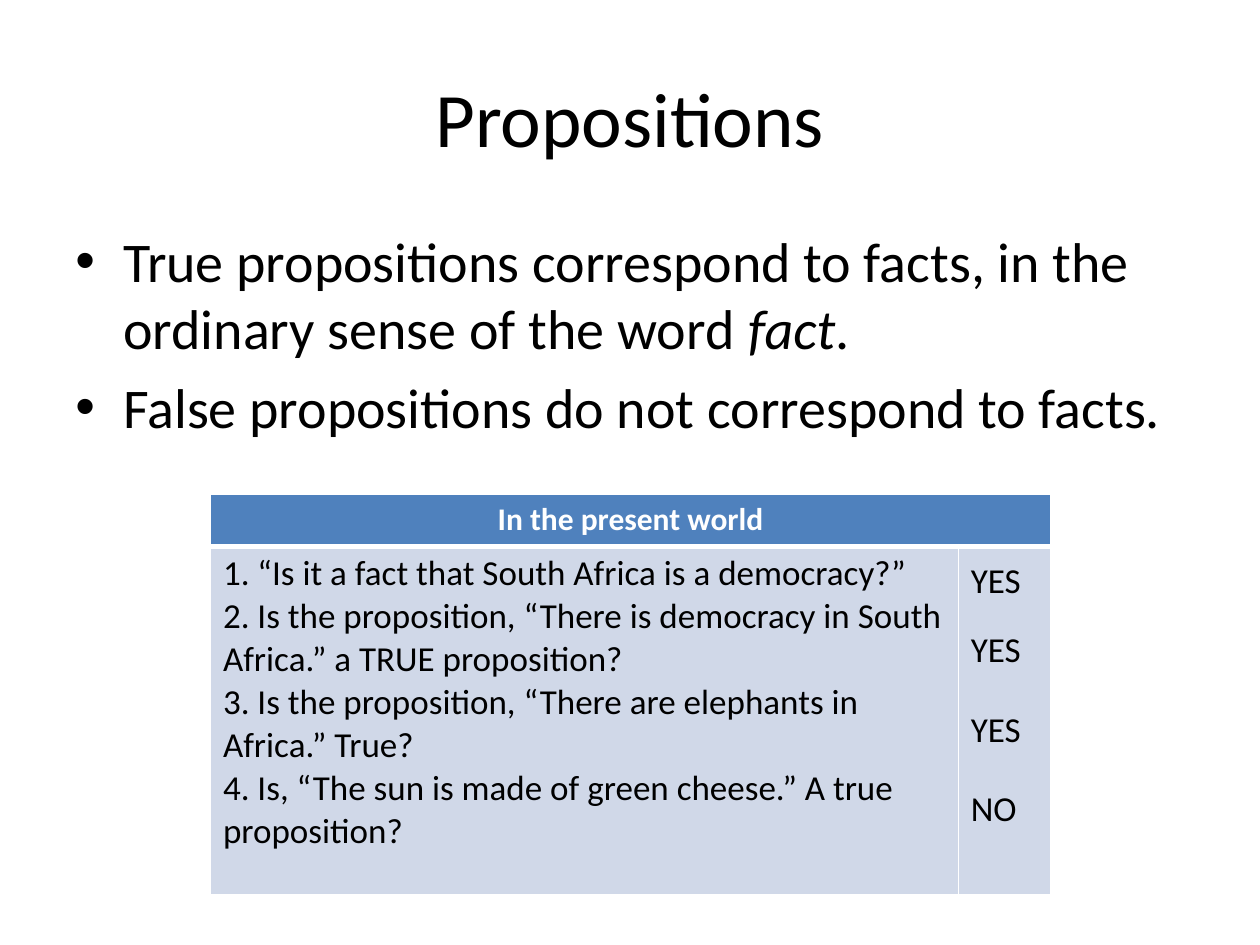
from lxml.etree import SubElement
from pptx import Presentation
from pptx.dml.color import RGBColor
from pptx.enum.text import MSO_ANCHOR, PP_ALIGN
from pptx.oxml.ns import qn
from pptx.util import Inches, Pt

WIDTH, HEIGHT = Inches(10), Inches(7.5)
FONT = "Calibri"
COLORS = {"text": "000000", "header": "4F81BD", "body": "D0D8E8", "white": "FFFFFF"}

BULLETS = [
    [("True propositions correspond to facts, in the ordinary sense of the word ", False),
     ("fact", True), (".", False)],
    [("False propositions do not correspond to facts.", False)],
]
QUESTIONS = [
    "1. “Is it a fact that South Africa is a democracy?”",
    "2. Is the proposition, “There is democracy in South Africa.” a TRUE proposition?",
    "3. Is the proposition, “There are elephants in Africa.” True?",
    "4. Is, “The sun is made of green cheese.” A true proposition?",
]
# Each answer with its top, as a share of the table's height
ANSWERS = [("YES", 0.145), ("YES", 0.317), ("YES", 0.516), ("NO", 0.714)]


def rgb(name):
    return RGBColor.from_string(COLORS[name])


def share(x, y, w, h):
    """Turn shares of the slide into a box."""
    return int(WIDTH * x), int(HEIGHT * y), int(WIDTH * w), int(HEIGHT * h)


def style(p, size, color="text", bold=False):
    p.font.name, p.font.size, p.font.bold = FONT, Pt(size), bold
    p.font.color.rgb = rgb(color)


def add_text_frame(s, box):
    tf = s.shapes.add_textbox(*box).text_frame
    tf.word_wrap = True
    return tf


def add_paragraph(tf, i):
    return tf.paragraphs[0] if i == 0 else tf.add_paragraph()


def add_title(s, box, text):
    tf = add_text_frame(s, box)
    tf.vertical_anchor = MSO_ANCHOR.MIDDLE
    p = tf.paragraphs[0]
    p.text, p.alignment = text, PP_ALIGN.CENTER
    style(p, 44)


def add_bullets(s, box, bullets):
    tf = add_text_frame(s, box)
    for i, runs in enumerate(bullets):
        p = add_paragraph(tf, i)
        p.space_before = Pt(6.4)
        for text, italic in runs:
            r = p.add_run()
            r.text, r.font.italic = text, italic
        style(p, 32)
        # Hanging bullet
        pPr = p._p.get_or_add_pPr()
        pPr.set("marL", str(Inches(0.38)))
        pPr.set("indent", str(-Inches(0.38)))
        bullet_font = pPr.makeelement(qn("a:buFont"), {"typeface": "Arial"})
        bullet = pPr.makeelement(qn("a:buChar"), {"char": "•"})
        pPr.insert_element_before(bullet_font, "a:defRPr")
        pPr.insert_element_before(bullet, "a:defRPr")


def set_cell(cell, fill, top_width, bottom_width):
    """White borders come before the fill in the cell's properties."""
    tcPr = cell._tc.get_or_add_tcPr()
    for side, width in (("L", 1), ("R", 1), ("T", top_width), ("B", bottom_width)):
        ln = SubElement(tcPr, qn(f"a:ln{side}"), w=str(Pt(width)))
        SubElement(SubElement(ln, qn("a:solidFill")), qn("a:srgbClr"), val=COLORS["white"])
    cell.fill.solid()
    cell.fill.fore_color.rgb = rgb(fill)


def add_fact_table(s, box, header, questions, answers):
    x, y, w, h = box
    table = s.shapes.add_table(2, 2, x, y, w, h).table
    for column, part in zip(table.columns, (0.89, 0.11)):
        column.width = int(w * part)
    for row, part in zip(table.rows, (0.13, 0.87)):
        row.height = int(h * part)
    for col in range(2):
        set_cell(table.cell(0, col), "header", 1, 3)
        set_cell(table.cell(1, col), "body", 3, 1)

    # Header across both columns
    head = table.cell(0, 0)
    head.merge(table.cell(0, 1))
    p = head.text_frame.paragraphs[0]
    p.text, p.alignment = header, PP_ALIGN.CENTER
    style(p, 18, "white", bold=True)

    # Questions in the wide column
    for i, question in enumerate(questions):
        p = add_paragraph(table.cell(1, 0).text_frame, i)
        p.text = question
        style(p, 20)

    # Answers laid over the narrow column
    for answer, top in answers:
        tf = add_text_frame(s, (x + int(w * 0.89), y + int(h * top), int(w * 0.12), int(h * 0.14)))
        p = tf.paragraphs[0]
        p.text = answer
        style(p, 20)


def main():
    prs = Presentation()
    prs.slide_width, prs.slide_height = WIDTH, HEIGHT
    s = prs.slides.add_slide(prs.slide_layouts[6])
    add_title(s, share(0.05, 0.04, 0.9, 0.167), "Propositions")
    add_bullets(s, share(0.05, 0.233, 0.9, 0.66), BULLETS)
    add_fact_table(s, share(0.167, 0.523, 0.667, 0.424), "In the present world",
                   QUESTIONS, ANSWERS)
    prs.save("out.pptx")


if __name__ == "__main__":
    main()
